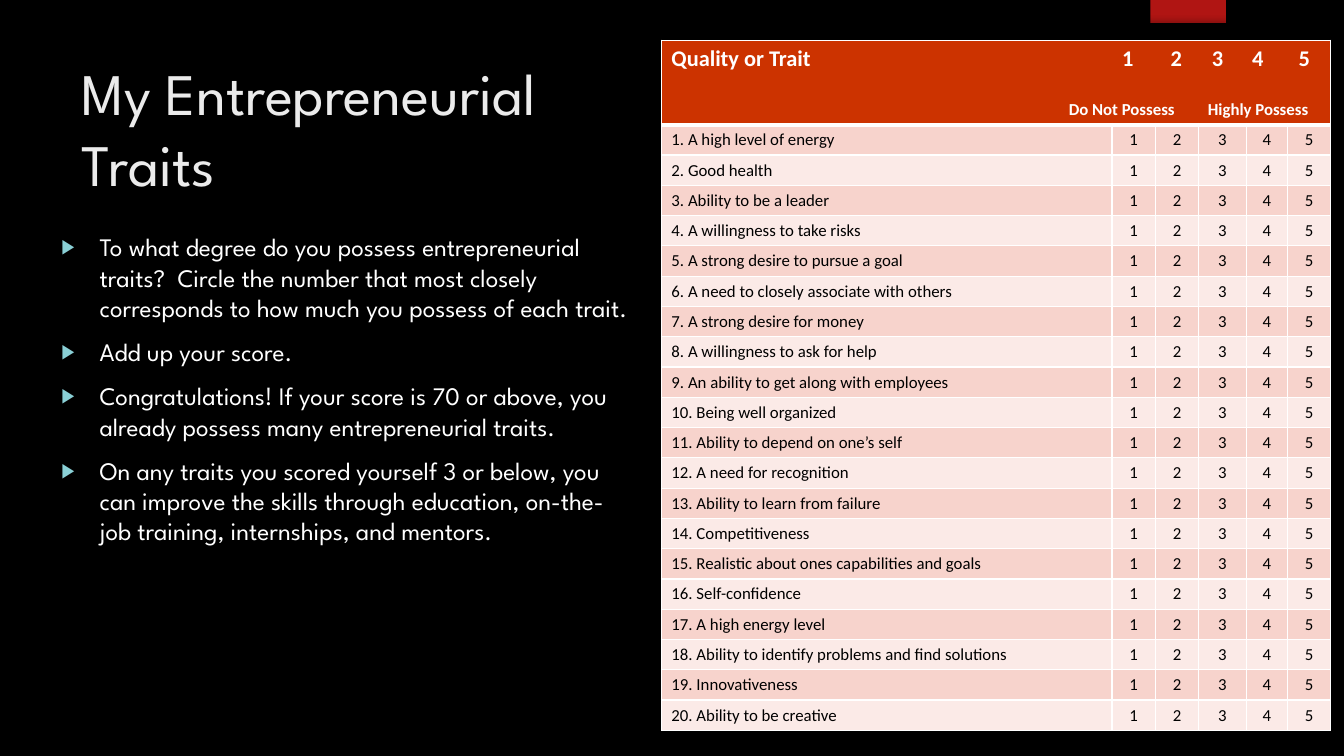
from dataclasses import dataclass
from typing import Optional

from lxml import etree
from pptx import Presentation
from pptx.dml.color import RGBColor
from pptx.enum.shapes import MSO_SHAPE
from pptx.enum.text import MSO_ANCHOR, PP_ALIGN
from pptx.oxml.ns import qn
from pptx.util import Inches, Pt

RECTANGLE = MSO_SHAPE.RECTANGLE
TOP, MIDDLE = MSO_ANCHOR.TOP, MSO_ANCHOR.MIDDLE
LEFT, CENTER = PP_ALIGN.LEFT, PP_ALIGN.CENTER


@dataclass(frozen=True)
class Theme:
    heading_font: str = "League Spartan"
    table_font: str = "Calibri"
    black: str = "000000"
    white: str = "FFFFFF"
    title: str = "EBEBEB"
    bullet: str = "8AD0D6"
    accent: str = "B01513"
    header: str = "CC3300"
    bands: tuple[str, str] = ("F7D3CC", "FBEAE7")
    title_size: int = 42
    body_size: int = 18
    header_size: int = 16
    cell_size: int = 12


@dataclass(frozen=True)
class Shadow:
    opacity: int
    blur: int
    direction: int
    distance: int = 2


@dataclass(frozen=True)
class Panel:
    left: float
    top: float
    width: float
    height: float
    color: str
    shadow: Optional[Shadow] = None


THEME = Theme()

PANELS = [
    Panel(11.41, 0, 0.75, 1.25, THEME.accent, Shadow(45, 3, 90)),
    Panel(0, 6.54, 13.33, 0.49, THEME.black, Shadow(25, 4, 90)),
    Panel(0, 0.23, 13.33, 0.49, THEME.black, Shadow(25, 4, 270)),
    Panel(0, 0.23, 13.33, 6.8, THEME.black),
]

INSTRUCTIONS = [
    "To what degree do you possess entrepreneurial traits?  Circle the number "
    "that most closely corresponds to how much you possess of each trait.",
    "Add up your score.",
    "Congratulations! If your score is 70 or above, you already possess many "
    "entrepreneurial traits.",
    "On any traits you scored yourself 3 or below, you can improve the skills "
    "through education, on-the-job training, internships, and mentors.",
]

TRAITS = [
    "A high level of energy", "Good health", "Ability to be a leader",
    "A willingness to take risks", "A strong desire to pursue a goal",
    "A need to closely associate with others", "A strong desire for money",
    "A willingness to ask for help", "An ability to get along with employees",
    "Being well organized", "Ability to depend on one’s self",
    "A need for recognition", "Ability to learn from failure",
    "Competitiveness", "Realistic about ones capabilities and goals",
    "Self-confidence", "A high energy level",
    "Ability to identify problems and find solutions", "Innovativeness",
    "Ability to be creative",
]
SCORES = ["1", "2", "3", "4", "5"]
COLUMN_WIDTHS = [4.47, 0.43, 0.43, 0.47, 0.41, 0.43]
HEADER_HEIGHT, ROW_HEIGHT = 0.56, 0.29
SCORE_TABS = (4.47, 4.95, 5.36, 5.76, 6.22)
LEGEND_TABS = (3.94, 5.32)


def add_bullet(paragraph, indent: float) -> None:
    properties = paragraph._p.get_or_add_pPr()
    properties.set("marL", str(Inches(indent)))
    properties.set("indent", str(-Inches(indent)))
    color = etree.SubElement(properties, qn("a:buClr"))
    etree.SubElement(color, qn("a:srgbClr"), val=THEME.bullet)
    etree.SubElement(properties, qn("a:buSzPct"), val="80000")
    etree.SubElement(properties, qn("a:buFont"), typeface="Arial")
    etree.SubElement(properties, qn("a:buChar"), char="▶")


def add_tabs(paragraph, positions: tuple[float, ...]) -> None:
    tab_list = etree.SubElement(paragraph._p.get_or_add_pPr(), qn("a:tabLst"))
    for position in positions:
        etree.SubElement(tab_list, qn("a:tab"), pos=str(Inches(position)), algn="l")


def write_text(frame, text: str, *, size: int, color: str, font: str,
               bold: bool = False, align=LEFT, space_before: float = 0,
               bullet_indent: float = 0, tabs: tuple[float, ...] = ()) -> None:
    """Fill the first paragraph if it is empty, otherwise add a paragraph."""
    first = frame.paragraphs[0]
    paragraph = frame.add_paragraph() if first.runs else first
    if bullet_indent:
        add_bullet(paragraph, bullet_indent)
    if tabs:
        add_tabs(paragraph, tabs)
    paragraph.alignment = align
    paragraph.space_before = Pt(space_before)
    run = paragraph.add_run()
    run.text = text
    run.font.size = Pt(size)
    run.font.name = font
    run.font.bold = bold
    run.font.color.rgb = RGBColor.from_string(color)


def add_panel(slide, panel: Panel) -> None:
    shape = slide.shapes.add_shape(
        RECTANGLE, Inches(panel.left), Inches(panel.top),
        Inches(panel.width), Inches(panel.height))
    shape.fill.solid()
    shape.fill.fore_color.rgb = RGBColor.from_string(panel.color)
    shape.line.fill.background()
    shape.shadow.inherit = False
    if panel.shadow:
        effects = shape._element.spPr.find(qn("a:effectLst"))
        outer = etree.SubElement(
            effects, qn("a:outerShdw"), blurRad=str(Pt(panel.shadow.blur)),
            dist=str(Pt(panel.shadow.distance)),
            dir=str(panel.shadow.direction * 60000), rotWithShape="0")
        color = etree.SubElement(outer, qn("a:srgbClr"), val=THEME.black)
        etree.SubElement(color, qn("a:alpha"), val=str(panel.shadow.opacity * 1000))


def add_text_frame(slide, left: float, top: float, width: float, height: float, anchor):
    shape = slide.shapes.add_textbox(
        Inches(left), Inches(top), Inches(width), Inches(height))
    frame = shape.text_frame
    frame.word_wrap = True
    frame.vertical_anchor = anchor
    return frame


def style_cell(cell, color: str, top: int = 1, bottom: int = 1) -> None:
    cell.fill.solid()
    cell.fill.fore_color.rgb = RGBColor.from_string(color)
    properties = cell._tc.get_or_add_tcPr()
    borders = [("a:lnL", 1), ("a:lnR", 1), ("a:lnT", top), ("a:lnB", bottom)]
    for index, (side, width) in enumerate(borders):
        line = etree.Element(qn(side), w=str(Pt(width)))
        fill = etree.SubElement(line, qn("a:solidFill"))
        etree.SubElement(fill, qn("a:srgbClr"), val=THEME.white)
        properties.insert(index, line)


def add_trait_table(slide) -> None:
    height = HEADER_HEIGHT + ROW_HEIGHT * len(TRAITS)
    table = slide.shapes.add_table(
        len(TRAITS) + 1, len(COLUMN_WIDTHS), Inches(6.56), Inches(0.4),
        Inches(sum(COLUMN_WIDTHS)), Inches(height)).table
    table.first_row = table.horz_banding = False
    for column, width in zip(table.columns, COLUMN_WIDTHS):
        column.width = Inches(width)
    for index, row in enumerate(table.rows):
        row.height = Inches(ROW_HEIGHT if index else HEADER_HEIGHT)

    # Header across all columns
    for cell in table.rows[0].cells:
        style_cell(cell, THEME.header, bottom=3)
    header = table.cell(0, 0)
    header.merge(table.cell(0, len(SCORES)))
    header_format = dict(color=THEME.white, font=THEME.table_font, bold=True)
    write_text(header.text_frame, "\t".join(["Quality or Trait", *SCORES]),
               size=THEME.header_size, tabs=SCORE_TABS, **header_format)
    write_text(header.text_frame, "\tDo Not Possess\tHighly Possess",
               size=THEME.cell_size, tabs=LEGEND_TABS, space_before=19.5,
               **header_format)

    # One banded row for each trait
    for number, trait in enumerate(TRAITS, start=1):
        band = THEME.bands[(number - 1) % 2]
        for column, text in enumerate([f"{number}. {trait}", *SCORES]):
            cell = table.cell(number, column)
            style_cell(cell, band, top=3 if number == 1 else 1)
            write_text(cell.text_frame, text, size=THEME.cell_size,
                       color=THEME.black, font=THEME.table_font,
                       align=CENTER if column else LEFT)


def main() -> None:
    presentation = Presentation()
    presentation.slide_width, presentation.slide_height = Inches(13.33), Inches(7.5)
    slide = presentation.slides.add_slide(presentation.slide_layouts[6])

    # Background and panels
    slide.background.fill.solid()
    slide.background.fill.fore_color.rgb = RGBColor.from_string(THEME.black)
    for panel in PANELS:
        add_panel(slide, panel)

    # Title and instructions
    title = add_text_frame(slide, 0.71, 0.5, 5.85, 1.53, MIDDLE)
    write_text(title, "My Entrepreneurial Traits", size=THEME.title_size,
               color=THEME.title, font=THEME.heading_font)
    body = add_text_frame(slide, 0.51, 2.25, 5.86, 4.59, TOP)
    for index, instruction in enumerate(INSTRUCTIONS):
        write_text(body, instruction, size=THEME.body_size, color=THEME.white,
                   font=THEME.heading_font, bullet_indent=0.38,
                   space_before=10 if index else 0)

    add_trait_table(slide)
    presentation.save("out.pptx")


if __name__ == "__main__":
    main()
